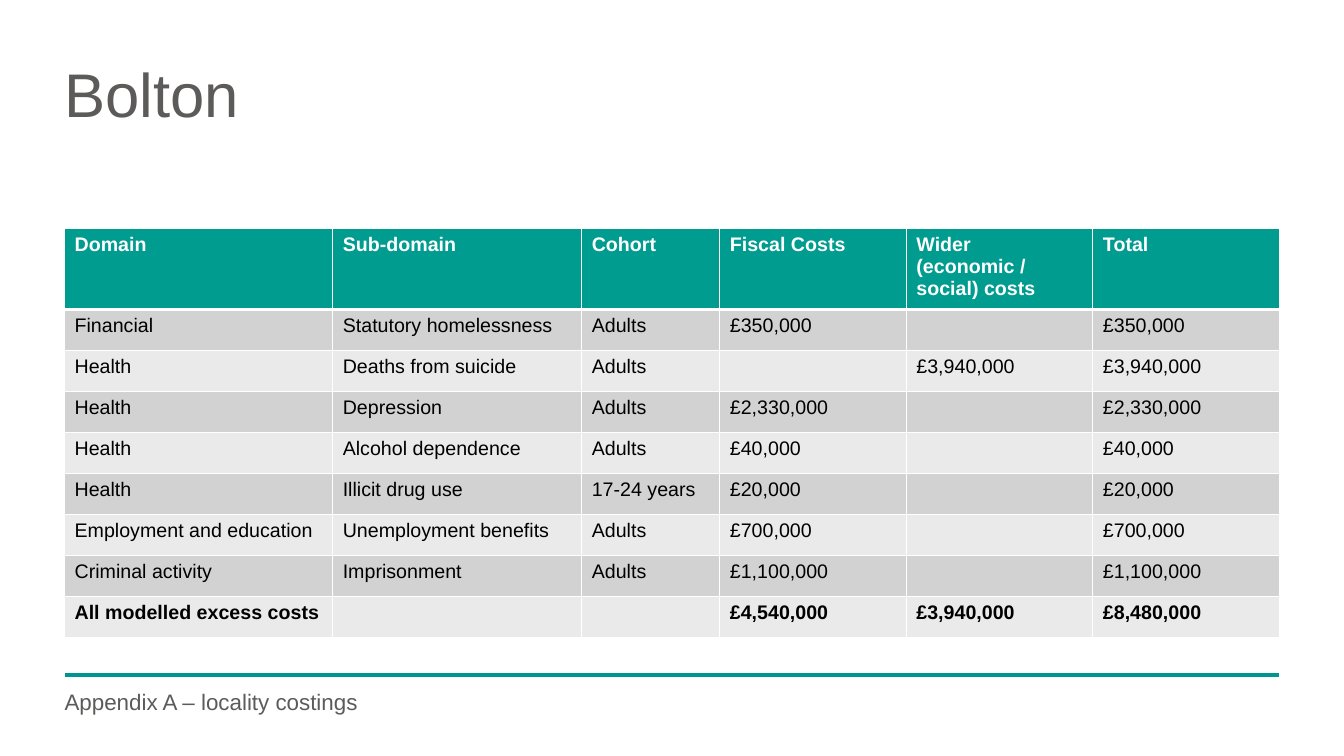
from lxml.etree import SubElement
from pptx import Presentation
from pptx.dml.color import RGBColor
from pptx.enum.shapes import MSO_CONNECTOR
from pptx.oxml.ns import qn
from pptx.util import Inches, Pt

TEAL, GREY, WHITE, BLACK = "009C90", "5C5B5A", "FFFFFF", "000000"
BANDS = ["EAEAEA", "D2D2D2"]
LEFT, WIDTH = 0.64, 12.05
COLUMN_WIDTHS = [2.66, 2.47, 1.37, 1.85, 1.85, 1.85]
ROW_HEIGHT = 0.4067
COSTS = [
    ["Domain", "Sub-domain", "Cohort", "Fiscal Costs", "Wider (economic / social) costs", "Total"],
    ["Financial", "Statutory homelessness", "Adults", "£350,000", "", "£350,000"],
    ["Health", "Deaths from suicide", "Adults", "", "£3,940,000", "£3,940,000"],
    ["Health", "Depression", "Adults", "£2,330,000", "", "£2,330,000"],
    ["Health", "Alcohol dependence", "Adults", "£40,000", "", "£40,000"],
    ["Health", "Illicit drug use", "17-24 years", "£20,000", "", "£20,000"],
    ["Employment and education", "Unemployment benefits", "Adults", "£700,000", "", "£700,000"],
    ["Criminal activity", "Imprisonment", "Adults", "£1,100,000", "", "£1,100,000"],
    ["All modelled excess costs", "", "", "£4,540,000", "£3,940,000", "£8,480,000"],
]


def paint(color_format, value):
    color_format.rgb = RGBColor.from_string(value)


def write(para, text, color, **formats):
    span = para.add_run()
    span.text = text
    for name, value in {"name": "Arial", **formats}.items():
        setattr(span.font, name, value)
    paint(span.font.color, color)


deck = Presentation()
deck.slide_width, deck.slide_height = Inches(13.33), Inches(7.5)
page = deck.slides.add_slide(deck.slide_layouts[6])

rule = page.shapes.add_connector(
    MSO_CONNECTOR.STRAIGHT, Inches(LEFT), Inches(6.7), Inches(LEFT + WIDTH), Inches(6.7))
rule.line.width = Pt(3)
paint(rule.line.color, "009690")
SubElement(rule._element.spPr, qn("a:effectLst"))

for text, top, height, size in [
    ("Bolton", 0.64, 1.01, 44),
    ("Appendix A – locality costings", 6.86, 0.42, 16),
]:
    box = page.shapes.add_textbox(Inches(LEFT), Inches(top), Inches(WIDTH), Inches(height))
    frame = box.text_frame
    for name, value in {"word_wrap": True, "margin_left": 0, "margin_top": 0,
                        "margin_right": 0, "margin_bottom": 0}.items():
        setattr(frame, name, value)
    para = frame.paragraphs[0]
    para.line_spacing = 0.9
    write(para, text, GREY, size=Pt(size))

table = page.shapes.add_table(
    len(COSTS), len(COLUMN_WIDTHS), Inches(LEFT), Inches(2.27),
    Inches(WIDTH), Inches(ROW_HEIGHT * len(COSTS))).table
for column, width in zip(table.columns, COLUMN_WIDTHS):
    column.width = Inches(width)

for row, texts in enumerate(COSTS):
    header = row == 0
    bold = row in (0, len(COSTS) - 1)
    for col, text in enumerate(texts):
        cell = table.cell(row, col)
        properties = cell._tc.get_or_add_tcPr()
        for side in "LRTB":
            thick = (row, side) in [(0, "B"), (1, "T")]
            border = SubElement(properties, qn(f"a:ln{side}"), w=str(Pt(3 if thick else 1)))
            fill = SubElement(border, qn("a:solidFill"))
            SubElement(fill, qn("a:srgbClr"), val=WHITE)
        cell.fill.solid()
        paint(cell.fill.fore_color, TEAL if header else BANDS[row % 2])
        if text:
            write(cell.text_frame.paragraphs[0], text, WHITE if header else BLACK,
                  size=Pt(14), bold=bold)

deck.save("out.pptx")
